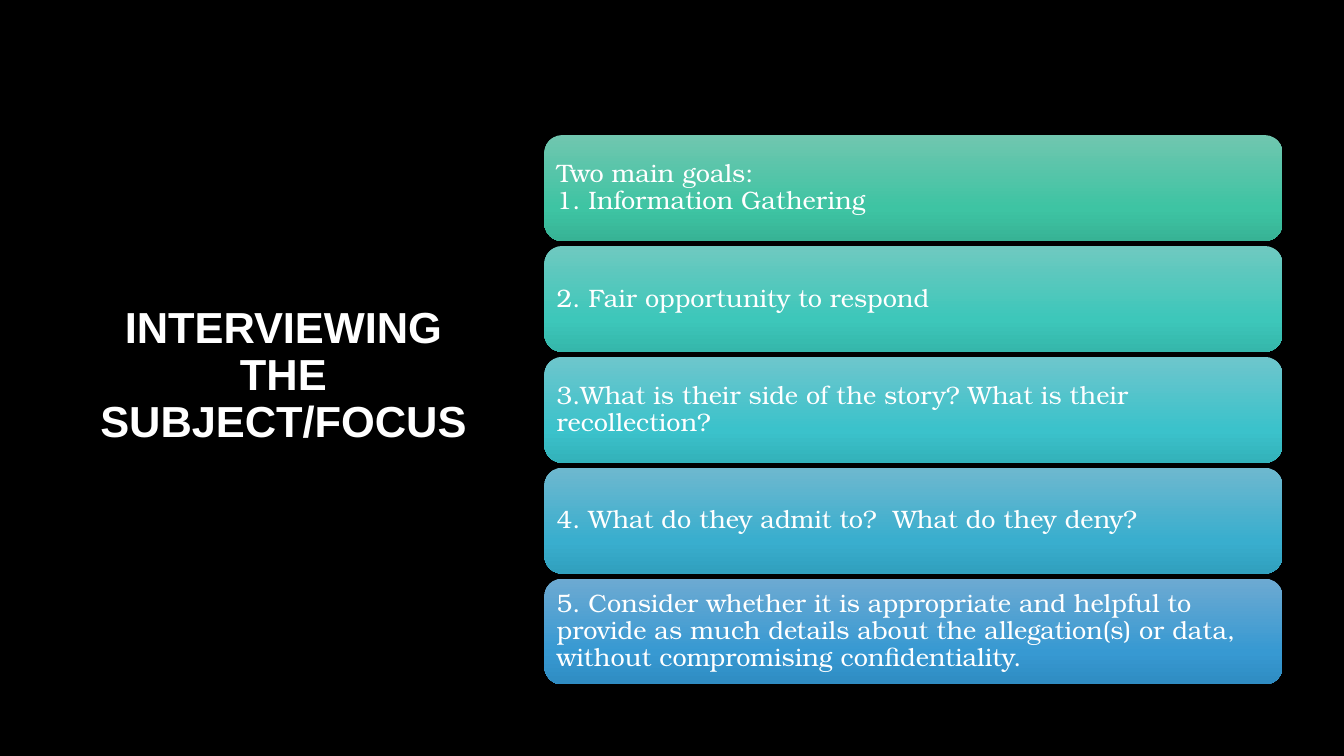
from copy import deepcopy
from dataclasses import dataclass

from pptx import Presentation
from pptx.dml.color import RGBColor as Rgb
from pptx.enum.shapes import MSO_SHAPE as Shape
from pptx.enum.text import MSO_ANCHOR as Anchor, PP_ALIGN as Align
from pptx.oxml.ns import qn
from pptx.util import Inches, Pt


@dataclass(frozen=True)
class Theme:
    """Colours, fonts and type sizes of the slide."""
    back: str = "000000"
    text: str = "FFFFFF"
    head: str = "Arial"
    body: str = "TeX Gyre Bonum"
    big: int = 31
    small: int = 18
    stops: tuple = (0, 0.69, 1)
    fills: tuple = (
        ("70C6AF", "3EC4A3", "37B395"),
        ("6FC9C0", "3DC7BA", "35B7AB"),
        ("6EC6CC", "3BC2CB", "33B2BA"),
        ("6EB8CF", "39AECE", "31A0BE"),
        ("6DAAD2", "3799D2", "2F8CC2"),
    )


THEME = Theme()
GOALS = (
    ("Two main goals:", "1. Information Gathering"),
    ("2. Fair opportunity to respond",),
    ("3.What is their side of the story? What is their recollection?",),
    ("4. What do they admit to?  What do they deny?",),
    ("5. Consider whether it is appropriate and helpful to provide as much "
     "details about the allegation(s) or data, without compromising "
     "confidentiality.",),
)


def write(frame, lines, face, size, align, bold=False):
    """Write lines as one paragraph, centred vertically in the frame."""
    frame.word_wrap = True
    frame.vertical_anchor = Anchor.MIDDLE
    para = frame.paragraphs[0]
    para.alignment = align
    para.line_spacing = 0.9
    for i, line in enumerate(lines):
        if i:
            para.add_line_break()
        run = para.add_run()
        run.text = line
        font = run.font
        font.name, font.size, font.bold = face, Pt(size), bold
        font.color.rgb = Rgb.from_string(THEME.text)


def shade(shape, tones):
    """Fill the shape with a three-tone gradient from top to bottom."""
    fill = shape.fill
    fill.gradient()
    fill.gradient_angle = 270
    stops = shape._element.spPr.find(qn("a:gradFill")).find(qn("a:gsLst"))
    stops.append(deepcopy(stops[-1]))
    for stop, place, tone in zip(fill.gradient_stops, THEME.stops, tones):
        stop.position = place
        stop.color.rgb = Rgb.from_string(tone)


def add_title(slide, text):
    """Add the bold title at the left."""
    box = slide.shapes.add_textbox(
        Inches(0.82), Inches(0.67), Inches(3.98), Inches(6.13))
    write(box.text_frame, [text], THEME.head, THEME.big, Align.CENTER, True)


def add_card(slide, top, lines, tones):
    """Add one rounded card with its text."""
    card = slide.shapes.add_shape(
        Shape.ROUNDED_RECTANGLE,
        Inches(5.4), Inches(top), Inches(7.32), Inches(1.05))
    card.shadow.inherit = False
    card.line.fill.background()
    shade(card, tones)
    frame = card.text_frame
    frame.margin_left = frame.margin_right = Inches(0.07)
    frame.margin_top = frame.margin_bottom = Inches(0.07)
    write(frame, lines, THEME.body, THEME.small, Align.LEFT)


def main():
    """Build the slide and save it."""
    deck = Presentation()
    deck.slide_width, deck.slide_height = Inches(13.33), Inches(7.5)
    slide = deck.slides.add_slide(deck.slide_layouts[6])
    back = slide.background.fill
    back.solid()
    back.fore_color.rgb = Rgb.from_string(THEME.back)
    add_title(slide, "INTERVIEWING THE SUBJECT/FOCUS")
    for i, (lines, tones) in enumerate(zip(GOALS, THEME.fills)):
        add_card(slide, 1.34 + 1.1 * i, lines, tones)
    deck.save("out.pptx")


if __name__ == "__main__":
    main()
